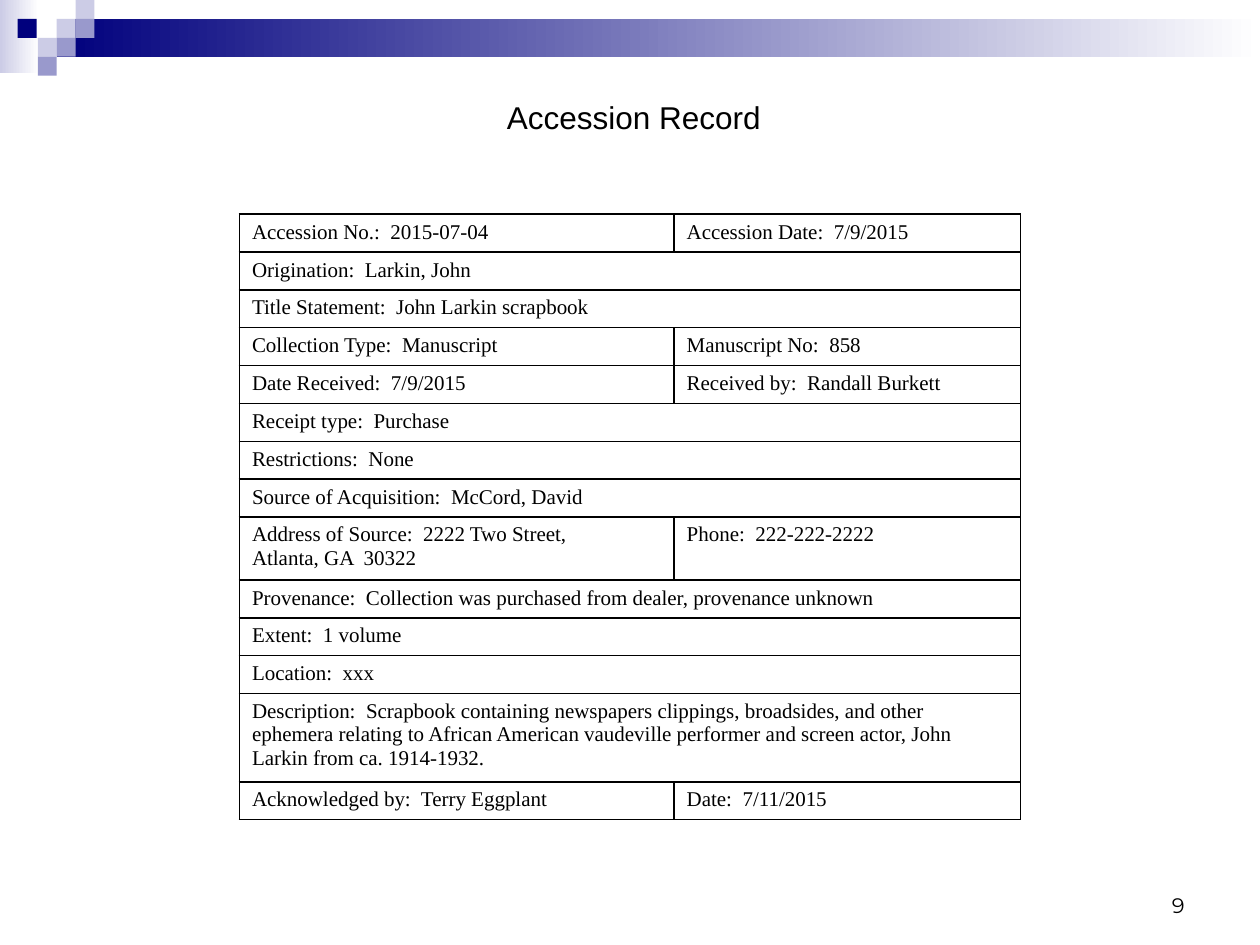
import pptx
import pptx.util
import pptx.dml.color
import pptx.enum.shapes
import pptx.enum.text
import pptx.oxml
import pptx.oxml.ns

Inches = pptx.util.Inches
Pt = pptx.util.Pt
RGBColor = pptx.dml.color.RGBColor
ALIGN = pptx.enum.text.PP_ALIGN
ANCHOR = pptx.enum.text.MSO_ANCHOR

BLACK = RGBColor(0x00, 0x00, 0x00)
WHITE = RGBColor(0xFF, 0xFF, 0xFF)
NAVY = RGBColor(0x00, 0x00, 0x7D)
LAVENDER = RGBColor(0xCC, 0xCC, 0xE6)
PERIWINKLE = RGBColor(0x99, 0x99, 0xCC)

TILE = 0.15
TILES = [
    (0.45, 0.15, LAVENDER),
    (0.6, 0, LAVENDER),
    (0.6, 0.15, PERIWINKLE),
    (0.3, 0.3, LAVENDER),
    (0.14, 0.15, NAVY),
    (0.45, 0.3, PERIWINKLE),
    (0.3, 0.45, PERIWINKLE),
]

COLUMN_WIDTHS = [3.45, 2.75]
ROW_HEIGHT = 0.3
TALL_ROWS = {8: 0.5, 12: 0.7}
RECORD = [
    ["Accession No.:  2015-07-04", "Accession Date:  7/9/2015"],
    ["Origination:  Larkin, John"],
    ["Title Statement:  John Larkin scrapbook"],
    ["Collection Type:  Manuscript", "Manuscript No:  858"],
    ["Date Received:  7/9/2015", "Received by:  Randall Burkett"],
    ["Receipt type:  Purchase"],
    ["Restrictions:  None"],
    ["Source of Acquisition:  McCord, David"],
    ["Address of Source:  2222 Two Street,\vAtlanta, GA  30322", "Phone:  222-222-2222"],
    ["Provenance:  Collection was purchased from dealer, provenance unknown"],
    ["Extent:  1 volume"],
    ["Location:  xxx"],
    ["Description:  Scrapbook containing newspapers clippings, broadsides, and other "
     "ephemera relating to African American vaudeville performer and screen actor, "
     "John Larkin from ca. 1914-1932."],
    ["Acknowledged by:  Terry Eggplant", "Date:  7/11/2015"],
]


def add_block(slide, left, top, width, height, color, fade_to=None):
    block = slide.shapes.add_shape(
        pptx.enum.shapes.MSO_SHAPE.RECTANGLE,
        Inches(left), Inches(top), Inches(width), Inches(height))
    block.shadow.inherit = False
    block.line.fill.background()
    if fade_to is None:
        block.fill.solid()
        block.fill.fore_color.rgb = color
    else:
        block.fill.gradient()
        block.fill.gradient_angle = 0
        for stop, shade in zip(block.fill.gradient_stops, (color, fade_to)):
            stop.color.rgb = shade


def style_text(paragraph, font_name, size):
    paragraph.font.name = font_name
    paragraph.font.size = Pt(size)
    paragraph.font.color.rgb = BLACK


def add_label(slide, left, top, width, height, text, font_name, size, align, anchor):
    frame = slide.shapes.add_textbox(
        Inches(left), Inches(top), Inches(width), Inches(height)).text_frame
    frame.word_wrap = True
    frame.vertical_anchor = anchor
    frame.text = text
    frame.paragraphs[0].alignment = align
    style_text(frame.paragraphs[0], font_name, size)
    return frame


def outline_cell(cell):
    properties = cell._tc.get_or_add_tcPr()
    for side in ("lnL", "lnR", "lnT", "lnB"):
        properties.append(pptx.oxml.parse_xml(
            f'<a:{side} {pptx.oxml.ns.nsdecls("a")} w="{Pt(1)}">'
            f'<a:solidFill><a:srgbClr val="{BLACK}"/></a:solidFill></a:{side}>'))
    cell.fill.background()


def add_record(slide, left, top):
    heights = [TALL_ROWS.get(i, ROW_HEIGHT) for i in range(len(RECORD))]
    table = slide.shapes.add_table(
        len(RECORD), len(COLUMN_WIDTHS), Inches(left), Inches(top),
        Inches(sum(COLUMN_WIDTHS)), Inches(sum(heights))).table
    table.first_row = False
    table.horz_banding = False
    for column, width in zip(table.columns, COLUMN_WIDTHS):
        column.width = Inches(width)
    for index, (entries, height) in enumerate(zip(RECORD, heights)):
        table.rows[index].height = Inches(height)
        cells = list(table.rows[index].cells)
        if len(entries) == 1:
            cells[0].merge(cells[-1])
        for cell in cells:
            outline_cell(cell)
        for cell, entry in zip(cells, entries):
            cell.text = entry
            style_text(cell.text_frame.paragraphs[0], "Times New Roman", 12)


def main():
    deck = pptx.Presentation()
    deck.slide_width = Inches(10)
    deck.slide_height = Inches(7.5)
    slide = deck.slides.add_slide(deck.slide_layouts[6])

    add_block(slide, 0, 0, 0.31, 0.58, LAVENDER, WHITE)
    add_block(slide, 0.45, 0.15, 9.55, 0.3, NAVY, WHITE)
    for left, top, color in TILES:
        add_block(slide, left, top, TILE, TILE, color)

    title = add_label(slide, 3.92, 0.72, 2.22, 0.6, "Accession Record",
                      "Arial", 18, ALIGN.CENTER, ANCHOR.TOP)
    title.margin_top = Inches(0.06)
    add_record(slide, 1.9, 1.7)
    add_label(slide, 7.17, 6.83, 2.33, 0.5, "9",
              "Montserrat", 12, ALIGN.RIGHT, ANCHOR.BOTTOM)

    deck.save("out.pptx")


if __name__ == "__main__":
    main()
